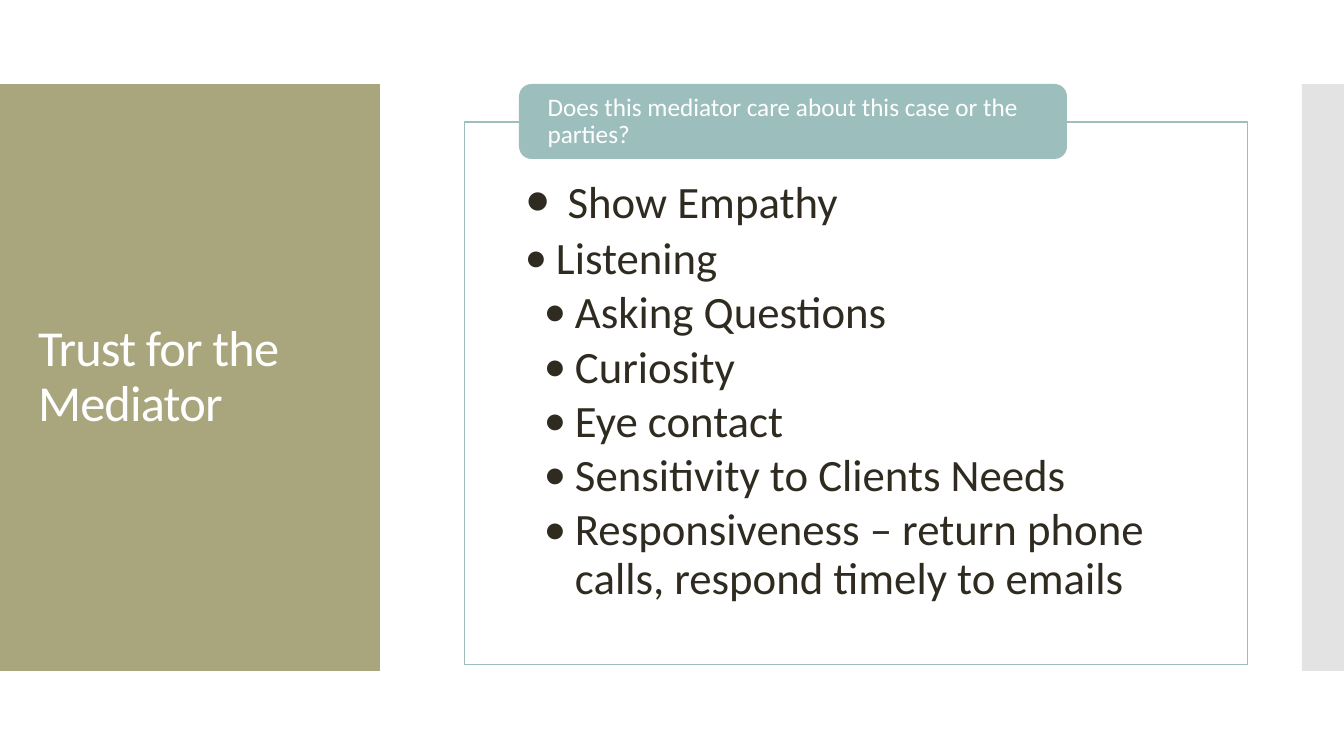
import pptx
import pptx.dml.color
import pptx.enum.shapes
import pptx.enum.text
import pptx.oxml
import pptx.oxml.ns
import pptx.util

PX = 914400 / 100.8
FONT = "Calibri"
COLORS = {
    "olive": "A9A57C",
    "gray": "C8C8C8",
    "teal": "9CBEBD",
    "white": "FFFFFF",
    "ink": "2F2B20",
}
SHAPES = pptx.enum.shapes.MSO_SHAPE
ANCHORS = pptx.enum.text.MSO_ANCHOR

LABEL = "Does this mediator care about this case or the parties?"
BULLETS = [
    (0, "Show Empathy"),
    (0, "Listening"),
    (1, "Asking Questions"),
    (1, "Curiosity"),
    (1, "Eye contact"),
    (1, "Sensitivity to Clients Needs"),
    (1, "Responsiveness – return phone calls, respond timely to emails"),
]


def px(length):
    return pptx.util.Emu(round(length * PX))


def rgb(name):
    return pptx.dml.color.RGBColor.from_string(COLORS[name])


def add_box(slide, box, fill, kind=SHAPES.RECTANGLE, line=None, opacity=100):
    shape = slide.shapes.add_shape(kind, *(px(length) for length in box))
    shape.shadow.inherit = False
    shape.fill.solid()
    shape.fill.fore_color.rgb = rgb(fill)
    if opacity < 100:
        color = shape.fill._xPr.find(".//" + pptx.oxml.ns.qn("a:srgbClr"))
        alpha = pptx.oxml.parse_xml(
            f'<a:alpha {pptx.oxml.ns.nsdecls("a")} val="{opacity * 1000}"/>')
        color.append(alpha)
    if line:
        shape.line.color.rgb = rgb(line)
        shape.line.width = pptx.util.Pt(0.75)
    else:
        shape.line.fill.background()
    return shape


def prepare_frame(shape, insets, anchor):
    """Set wrapping, anchor and the left, top, right and bottom insets in px."""
    frame = shape.text_frame
    frame.word_wrap = True
    frame.vertical_anchor = anchor
    (frame.margin_left, frame.margin_top,
     frame.margin_right, frame.margin_bottom) = (px(inset) for inset in insets)
    return frame


def write(paragraph, text, size, color, spacing=0, space_after=0):
    """Append a run to a left-aligned paragraph; sizes are in points."""
    paragraph.alignment = pptx.enum.text.PP_ALIGN.LEFT
    paragraph.line_spacing = 0.9
    paragraph.space_after = pptx.util.Pt(space_after)
    run = paragraph.add_run()
    run.text = text
    run.font.name = FONT
    run.font.size = pptx.util.Pt(size)
    run.font.color.rgb = rgb(color)
    if spacing:
        run._r.get_or_add_rPr().set("spc", str(round(spacing * 100)))


def add_bullet(paragraph, level):
    paragraph.level = level
    properties = paragraph._p.get_or_add_pPr()
    hanging = 31
    properties.set("marL", str(px(hanging + 19 * level)))
    properties.set("indent", str(-px(hanging)))
    for tag, attribute, value in (("buFont", "typeface", FONT), ("buChar", "char", "•")):
        properties.append(pptx.oxml.parse_xml(
            f'<a:{tag} {pptx.oxml.ns.nsdecls("a")} {attribute}="{value}"/>'))


def add_title_band(slide, box):
    band = add_box(slide, box, "olive")
    frame = prepare_frame(band, (38, 0, 37, 0), ANCHORS.MIDDLE)
    write(frame.paragraphs[0], "Trust for the Mediator", 36, "white", spacing=-0.6)


def add_bullet_panel(slide, box):
    left, top, width, height = box
    panel = add_box(slide, box, "white", line="teal", opacity=90)
    frame = prepare_frame(panel, (60, 52, 60, 29), ANCHORS.TOP)
    for index, (level, text) in enumerate(BULLETS):
        paragraph = frame.paragraphs[0] if index == 0 else frame.add_paragraph()
        if index == 0:
            write(paragraph, " ", 37, "ink")
        write(paragraph, text, 32, "ink", space_after=4.2)
        add_bullet(paragraph, level)

    label = add_box(slide, (left + 54, top - 38, 548, 75), "teal",
                    kind=SHAPES.ROUNDED_RECTANGLE)
    frame = prepare_frame(label, (25, 0, 25, 0), ANCHORS.MIDDLE)
    write(frame.paragraphs[0], LABEL, 18, "white")


def main():
    presentation = pptx.Presentation()
    presentation.slide_width, presentation.slide_height = px(1344), px(756)
    slide = presentation.slides.add_slide(presentation.slide_layouts[6])
    band_top, band_height = 84, 587
    add_title_band(slide, (0, band_top, 380, band_height))
    add_box(slide, (1302, band_top, 42, band_height), "gray", opacity=50)
    add_bullet_panel(slide, (465, 122, 783, 543))
    presentation.save("out.pptx")


if __name__ == "__main__":
    main()
